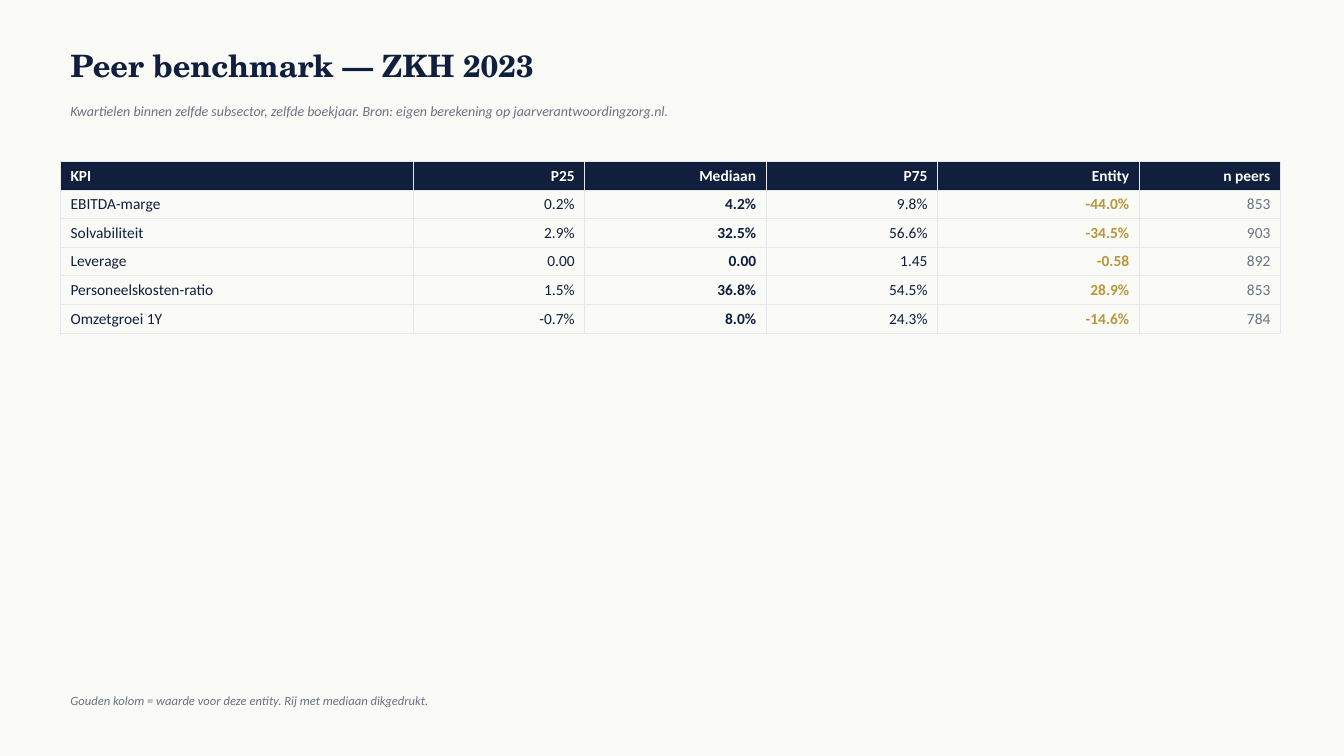
from dataclasses import dataclass

from lxml.etree import SubElement
from pptx import Presentation
from pptx.dml.color import RGBColor
from pptx.enum.text import MSO_ANCHOR, PP_ALIGN
from pptx.oxml.ns import qn
from pptx.slide import Slide
from pptx.table import Table, _Cell
from pptx.text.text import Font
from pptx.util import Inches, Pt

NAVY = RGBColor(0x0F, 0x1F, 0x3D)
GOLD = RGBColor(0xB8, 0x97, 0x3B)
GRAY = RGBColor(0x6B, 0x72, 0x80)
RULE = RGBColor(0xE5, 0xE7, 0xEB)
PAPER = RGBColor(0xFA, 0xFA, 0xF7)
WHITE = RGBColor(0xFF, 0xFF, 0xFF)

SERIF = "TeX Gyre Schola"
SANS = "Calibri"
LEFT = 0.6


@dataclass(frozen=True)
class Style:
    size: int
    color: RGBColor
    face: str = SANS
    bold: bool = False
    slant: bool = False


@dataclass(frozen=True)
class Label:
    text: str
    top: float
    height: float
    style: Style


@dataclass(frozen=True)
class Column:
    head: str
    width: float
    style: Style
    align: PP_ALIGN = PP_ALIGN.RIGHT


HEAD = Style(11, WHITE, bold=True)
PLAIN = Style(11, NAVY)
STRONG = Style(11, NAVY, bold=True)
VALUE = Style(11, GOLD, bold=True)
MUTED = Style(11, GRAY)

LABELS = [
    Label("Peer benchmark — ZKH 2023", 0.4, 0.5, Style(22, NAVY, SERIF, bold=True)),
    Label(
        "Kwartielen binnen zelfde subsector, zelfde boekjaar. "
        "Bron: eigen berekening op jaarverantwoordingzorg.nl.",
        0.95, 0.3, Style(10, GRAY, slant=True),
    ),
    Label(
        "Gouden kolom = waarde voor deze entity. Rij met mediaan dikgedrukt.",
        6.8, 0.3, Style(9, GRAY, slant=True),
    ),
]

COLUMNS = [
    Column("KPI", 3.5, PLAIN, PP_ALIGN.LEFT),
    Column("P25", 1.7, PLAIN),
    Column("Mediaan", 1.8, STRONG),
    Column("P75", 1.7, PLAIN),
    Column("Entity", 2, VALUE),
    Column("n peers", 1.4, MUTED),
]

ROWS = [
    ("EBITDA-marge", "0.2%", "4.2%", "9.8%", "-44.0%", "853"),
    ("Solvabiliteit", "2.9%", "32.5%", "56.6%", "-34.5%", "903"),
    ("Leverage", "0.00", "0.00", "1.45", "-0.58", "892"),
    ("Personeelskosten-ratio", "1.5%", "36.8%", "54.5%", "28.9%", "853"),
    ("Omzetgroei 1Y", "-0.7%", "8.0%", "24.3%", "-14.6%", "784"),
]


def set_font(font: Font, style: Style) -> None:
    font.name = style.face
    font.size = Pt(style.size)
    font.bold = style.bold
    font.italic = style.slant
    font.color.rgb = style.color


def add_label(slide: Slide, label: Label) -> None:
    box = slide.shapes.add_textbox(
        Inches(LEFT), Inches(label.top), Inches(12), Inches(label.height)
    )
    frame = box.text_frame
    frame.word_wrap = True
    frame.vertical_anchor = MSO_ANCHOR.MIDDLE
    frame.text = label.text
    set_font(frame.paragraphs[0].runs[0].font, label.style)


def add_rules(cell: _Cell) -> None:
    props = cell._tc.get_or_add_tcPr()
    for side in ("lnL", "lnR", "lnT", "lnB"):
        line = SubElement(props, qn(f"a:{side}"), w=str(Pt(0.5)))
        fill = SubElement(line, qn("a:solidFill"))
        SubElement(fill, qn("a:srgbClr"), val=str(RULE))


def fill_cell(cell: _Cell, text: str, style: Style, align: PP_ALIGN) -> None:
    add_rules(cell)
    if style is HEAD:
        cell.fill.solid()
        cell.fill.fore_color.rgb = NAVY
    else:
        cell.fill.background()
    cell.text_frame.text = text
    para = cell.text_frame.paragraphs[0]
    para.alignment = align
    set_font(para.runs[0].font, style)


def add_grid(slide: Slide) -> Table:
    count = len(ROWS) + 1
    width = sum(col.width for col in COLUMNS)
    table = slide.shapes.add_table(
        count, len(COLUMNS), Inches(LEFT), Inches(1.6),
        Inches(width), Inches(0.28 * count),
    ).table
    table.horz_banding = False
    for x, col in enumerate(COLUMNS):
        table.columns[x].width = Inches(col.width)
        fill_cell(table.cell(0, x), col.head, HEAD, col.align)
        for y, row in enumerate(ROWS, 1):
            fill_cell(table.cell(y, x), row[x], col.style, col.align)
    return table


def main() -> None:
    deck = Presentation()
    deck.slide_width = Inches(13.33)
    deck.slide_height = Inches(7.5)
    slide = deck.slides.add_slide(deck.slide_layouts[6])

    # Background
    back = slide.background.fill
    back.solid()
    back.fore_color.rgb = PAPER

    # Title, subtitle and footnote
    for label in LABELS:
        add_label(slide, label)

    # Benchmark table
    add_grid(slide)

    deck.save("out.pptx")


if __name__ == "__main__":
    main()
